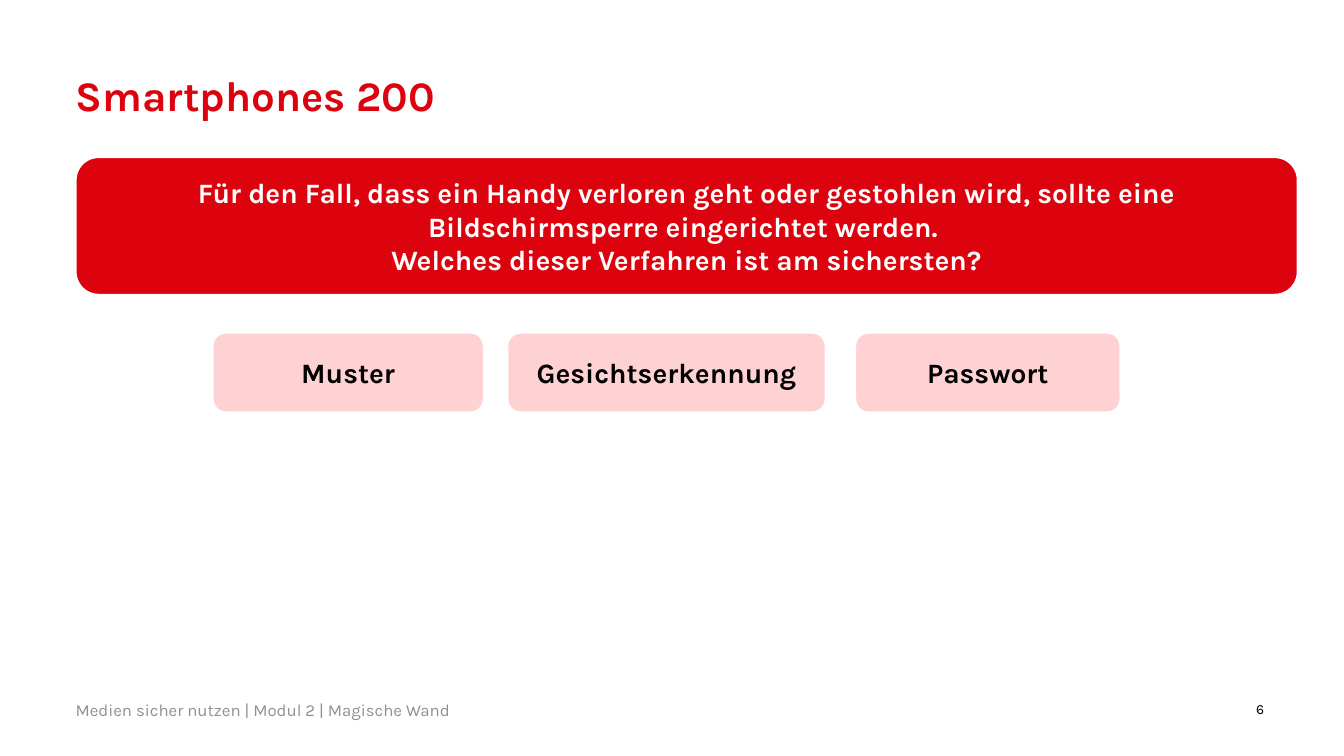
import pptx
import pptx.util
import pptx.dml.color
import pptx.enum.shapes
import pptx.enum.text
import pptx.oxml.ns
import lxml.etree

RED = pptx.dml.color.RGBColor(0xDC, 0x02, 0x0E)
PINK = pptx.dml.color.RGBColor(0xFE, 0xC6, 0xC9)
WHITE = pptx.dml.color.RGBColor(0xFF, 0xFF, 0xFF)
BLACK = pptx.dml.color.RGBColor(0x00, 0x00, 0x00)
GRAY = pptx.dml.color.RGBColor(0x90, 0x90, 0x90)

FONT = "Karla"
COLUMNS, ROWS = 160, 90
SLIDE_WIDTH = pptx.util.Inches(13.33)
SLIDE_HEIGHT = pptx.util.Inches(7.5)
ALIGN = pptx.enum.text.PP_ALIGN
ANCHOR = pptx.enum.text.MSO_ANCHOR


def place(box):
    left, top, width, height = box
    column, row = SLIDE_WIDTH / COLUMNS, SLIDE_HEIGHT / ROWS
    return (round(left * column), round(top * row),
            round(width * column), round(height * row))


def write(frame, *lines, size, color, bold=False, align=ALIGN.LEFT,
          anchor=ANCHOR.MIDDLE, spacing=None, inset=None):
    frame.word_wrap = True
    frame.vertical_anchor = anchor
    if inset is not None:
        frame.margin_left = frame.margin_right = inset
        frame.margin_top = frame.margin_bottom = inset
    for index, line in enumerate(lines):
        paragraph = frame.add_paragraph() if index else frame.paragraphs[0]
        paragraph.alignment = align
        paragraph.line_spacing = spacing
        run = paragraph.add_run()
        run.text = line
        run.font.name = FONT
        run.font.size = pptx.util.Pt(size)
        run.font.bold = bold
        run.font.color.rgb = color


def add_label(slide, box, text, **style):
    label = slide.shapes.add_textbox(*place(box))
    write(label.text_frame, text, inset=0, **style)


def add_card(slide, box, *lines, fill, color, opacity=100):
    card = slide.shapes.add_shape(
        pptx.enum.shapes.MSO_SHAPE.ROUNDED_RECTANGLE, *place(box))
    card.shadow.inherit = False
    card.fill.solid()
    card.fill.fore_color.rgb = fill
    if opacity < 100:
        tone = card.fill._xPr.find(".//" + pptx.oxml.ns.qn("a:srgbClr"))
        alpha = lxml.etree.SubElement(tone, pptx.oxml.ns.qn("a:alpha"))
        alpha.set("val", str(opacity * 1000))
    card.line.color.rgb = WHITE
    card.line.width = pptx.util.Pt(1.5)
    write(card.text_frame, *lines, size=20, color=color, bold=True,
          align=ALIGN.CENTER)


def add_title(slide, box):
    add_label(slide, box, "Smartphones 200", size=30, color=RED, bold=True,
              anchor=ANCHOR.TOP, spacing=0.9)


def add_question(slide, box):
    add_card(slide, box,
             "Für den Fall, dass ein Handy verloren geht oder gestohlen wird, "
             "sollte eine Bildschirmsperre eingerichtet werden. ",
             "Welches dieser Verfahren ist am sichersten?",
             fill=RED, color=WHITE)


def add_answers(slide, box):
    left, top, width, height = box
    answers = [("Muster", 0, 32.3),
               ("Gesichtserkennung", 35.1, 37.9),
               ("Passwort", 76.5, 31.6)]
    for answer, offset, answer_width in answers:
        add_card(slide, (left + offset, top, answer_width, height), answer,
                 fill=PINK, color=BLACK, opacity=80)


def add_footer(slide, box):
    left, top, width, height = box
    number_width = 8.4
    add_label(slide, (left, top, 118.1, height),
              "Medien sicher nutzen | Modul 2 | Magische Wand",
              size=12, color=GRAY)
    add_label(slide, (left + width - number_width, top, number_width, height),
              "6", size=10, color=BLACK, align=ALIGN.RIGHT)


def main():
    deck = pptx.Presentation()
    deck.slide_width, deck.slide_height = SLIDE_WIDTH, SLIDE_HEIGHT
    slide = deck.slides.add_slide(deck.slide_layouts[6])
    add_title(slide, (9, 9, 141.8, 5.2))
    add_footer(slide, (9, 83.5, 141.5, 1.9))
    add_question(slide, (9, 18.7, 145.5, 16.4))
    add_answers(slide, (25.3, 39.6, 108.1, 9.5))
    deck.save("out.pptx")


if __name__ == "__main__":
    main()
